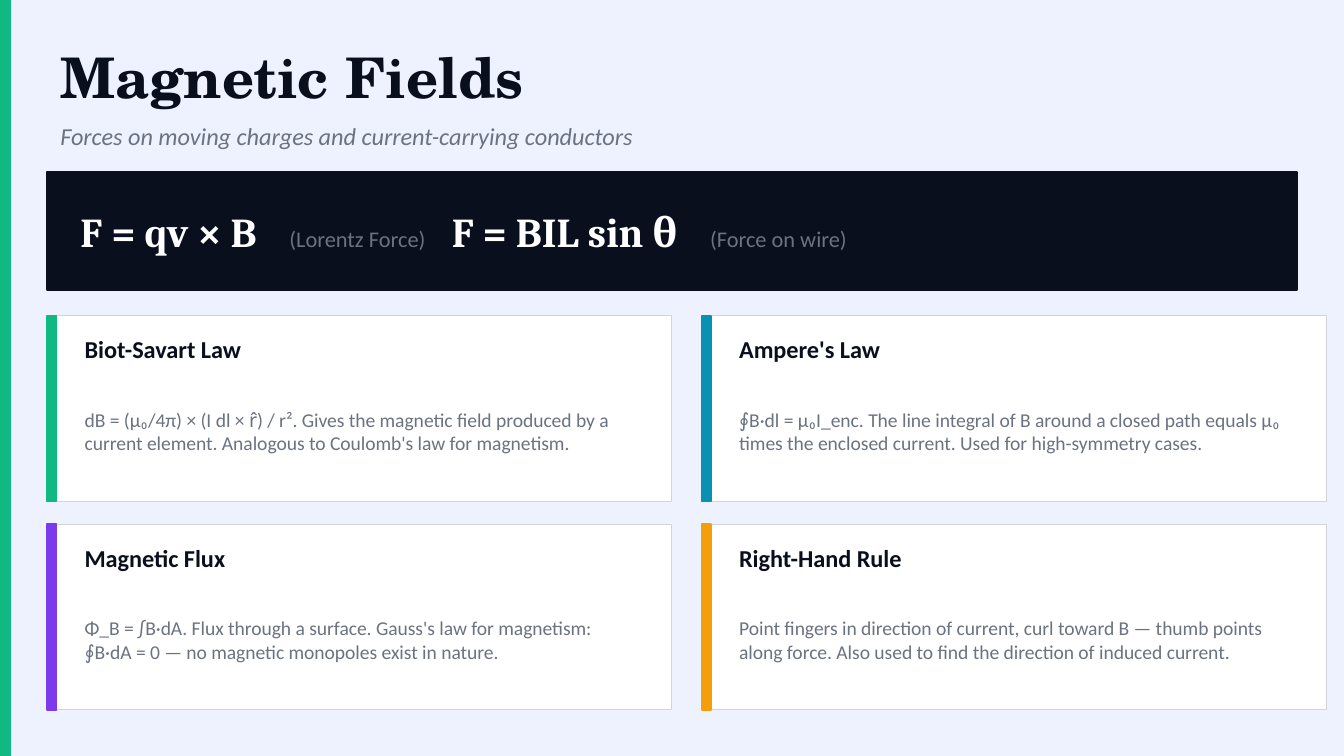
from lxml import etree
from pptx import Presentation
from pptx.dml.color import RGBColor
from pptx.enum.shapes import MSO_SHAPE
from pptx.enum.text import MSO_ANCHOR, MSO_AUTO_SIZE, PP_ALIGN
from pptx.oxml.ns import qn
from pptx.util import Cm, Pt

RECT = MSO_SHAPE.RECTANGLE
MIDDLE = MSO_ANCHOR.MIDDLE
LEFT = PP_ALIGN.LEFT
NO_FIT = MSO_AUTO_SIZE.NONE

BACKGROUND = RGBColor(0xEE, 0xF2, 0xFF)
INK = RGBColor(0x0A, 0x0F, 0x1E)
GRAY = RGBColor(0x6B, 0x72, 0x80)
WHITE = RGBColor(0xFF, 0xFF, 0xFF)
BORDER = RGBColor(0xD1, 0xD5, 0xDB)
GREEN = RGBColor(0x10, 0xB9, 0x81)
TEAL = RGBColor(0x08, 0x91, 0xB2)
VIOLET = RGBColor(0x7C, 0x3A, 0xED)
AMBER = RGBColor(0xF5, 0x9E, 0x0B)

# Content
TITLE = "Magnetic Fields"
SUBTITLE = "Forces on moving charges and current-carrying conductors"
FORMULAS = [("F = qv × B", "(Lorentz Force)"),
            ("F = BIL sin θ", "(Force on wire)")]
CARDS = [
    ("Biot-Savart Law", GREEN,
     "dB = (μ₀/4π) × (I dl × r̂) / r². Gives the magnetic field produced by a "
     "current element. Analogous to Coulomb's law for magnetism."),
    ("Ampere's Law", TEAL,
     "∮B·dl = μ₀I_enc. The line integral of B around a closed path equals μ₀ "
     "times the enclosed current. Used for high-symmetry cases."),
    ("Magnetic Flux", VIOLET,
     "Φ_B = ∫B·dA. Flux through a surface. Gauss's law for magnetism: "
     "∮B·dA = 0 — no magnetic monopoles exist in nature."),
    ("Right-Hand Rule", AMBER,
     "Point fingers in direction of current, curl toward B — thumb points "
     "along force. Also used to find the direction of induced current."),
]

# Layout, in centimetres
SLIDE_W, SLIDE_H = 25.4, 14.29
MARGIN = 0.89
HEAD_W = 22.86
BANNER_Y, BANNER_W, BANNER_H = 3.25, 23.62, 2.24
FORMULA_TABS = [3.95, 7.02, 11.9]
GRID_Y, COLUMNS = 5.97, 2
CARD_W, CARD_H = 11.81, 3.51
GAP_X, GAP_Y = 0.56, 0.43
ACCENT_W = 0.18
CARD_TEXT_X, CARD_TEXT_W = 0.46, 10.92


def set_font(font, size, color, name="Calibri", bold=False, italic=False):
    font.size, font.name = Pt(size), name
    font.bold, font.italic = bold, italic
    font.color.rgb = color


def add_rect(x, y, w, h, fill, line=None, width=1):
    s = slide.shapes.add_shape(RECT, Cm(x), Cm(y), Cm(w), Cm(h))
    s.shadow.inherit = False
    s.fill.solid()
    s.fill.fore_color.rgb = fill
    s.line.color.rgb = line or fill
    s.line.width = Pt(width)


def place_frame(s, x, y, w, h):
    s.left, s.top, s.width, s.height = Cm(x), Cm(y), Cm(w), Cm(h)
    tf = s.text_frame
    tf.word_wrap, tf.auto_size, tf.vertical_anchor = True, NO_FIT, MIDDLE
    p = tf.paragraphs[0]
    p.alignment = LEFT
    return p


def add_text(x, y, w, h, text="", **style):
    p = place_frame(slide.shapes.add_textbox(0, 0, 0, 0), x, y, w, h)
    if text:
        p.text = text
        set_font(p.font, **style)
    return p


prs = Presentation()
prs.slide_width, prs.slide_height = Cm(SLIDE_W), Cm(SLIDE_H)
slide = prs.slides.add_slide(prs.slide_layouts[5])
slide.background.fill.solid()
slide.background.fill.fore_color.rgb = BACKGROUND

# Side stripe and heading
add_rect(0, 0, 0.2, SLIDE_H, GREEN)
p = place_frame(slide.shapes.title, MARGIN, 0.66, HEAD_W, 1.57)
p.text = TITLE
set_font(p.font, 30, INK, "TeX Gyre Schola", bold=True)
add_text(MARGIN, 2.18, HEAD_W, 0.76, SUBTITLE, size=13, color=GRAY, italic=True)

# Formula banner, spaced with tab stops
add_rect(MARGIN, BANNER_Y, BANNER_W, BANNER_H, INK)
p = add_text(1.27, BANNER_Y, 23.11, BANNER_H)
tabs = etree.SubElement(p._p.get_or_add_pPr(), qn("a:tabLst"))
for stop in FORMULA_TABS:
    etree.SubElement(tabs, qn("a:tab"), pos=str(Cm(stop)), algn="l")
for i, (formula, label) in enumerate(FORMULAS):
    r = p.add_run()
    r.text = "\t" + formula if i else formula
    set_font(r.font, 22, WHITE, "Cambria", bold=True)
    r = p.add_run()
    r.text = "\t" + label
    set_font(r.font, 12, GRAY)

# Law cards
for i, (heading, accent, body) in enumerate(CARDS):
    row, col = divmod(i, COLUMNS)
    x = MARGIN + col * (CARD_W + GAP_X)
    y = GRID_Y + row * (CARD_H + GAP_Y)
    add_rect(x, y, CARD_W, CARD_H, WHITE, BORDER, 0.5)
    add_rect(x, y, ACCENT_W, CARD_H, accent)
    add_text(x + CARD_TEXT_X, y + 0.25, CARD_TEXT_W, 0.76, heading,
             size=13, color=INK, bold=True)
    add_text(x + CARD_TEXT_X, y + 1.12, CARD_TEXT_W, 2.13, body,
             size=10.5, color=GRAY)

prs.save("out.pptx")
